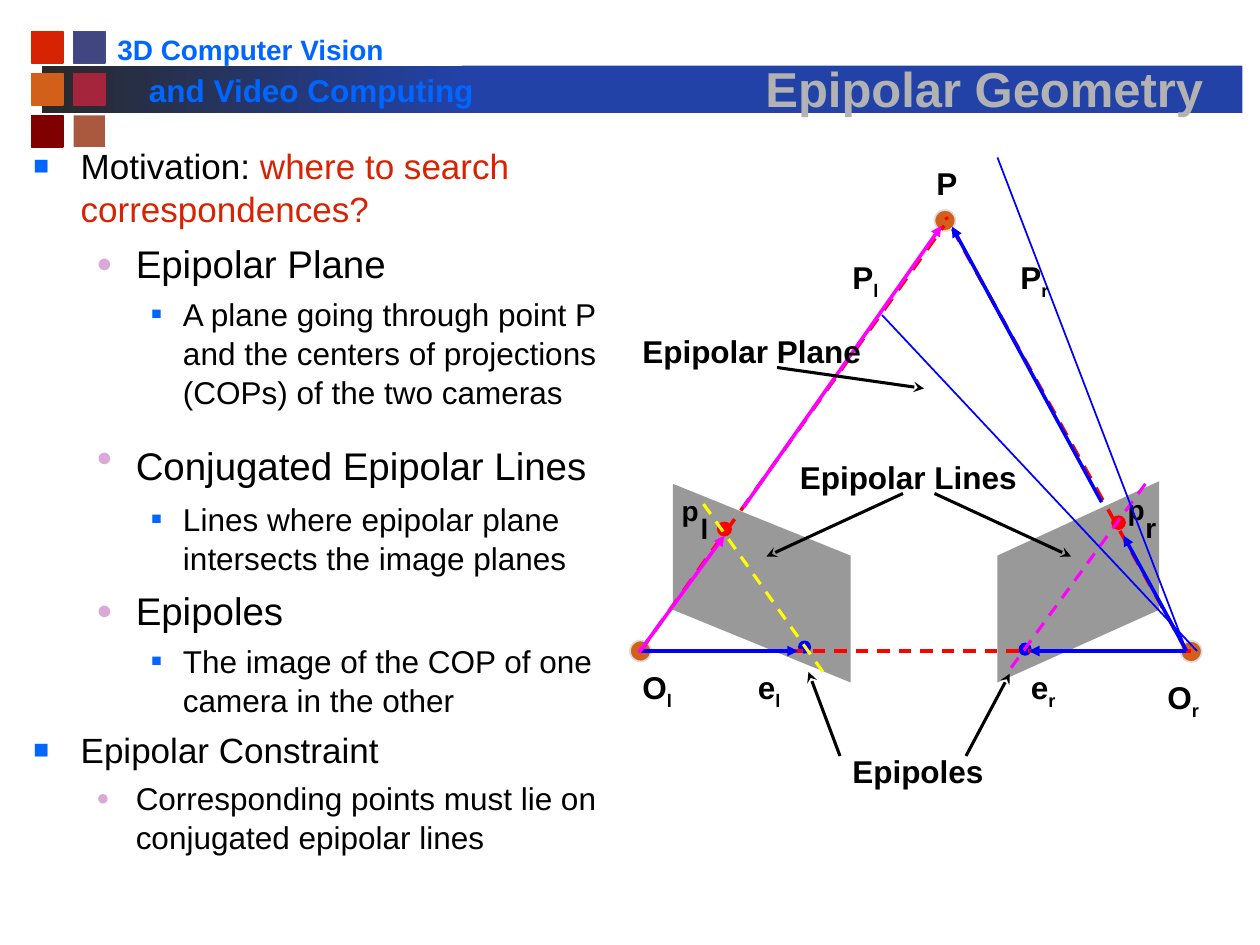
from lxml.etree import SubElement
from pptx import Presentation
from pptx.dml.color import RGBColor
from pptx.enum.dml import MSO_LINE
from pptx.enum.shapes import MSO_CONNECTOR, MSO_SHAPE
from pptx.enum.text import MSO_ANCHOR, PP_ALIGN
from pptx.oxml.ns import qn
from pptx.util import Pt

FONT = "Arial"
BLACK = RGBColor(0x00, 0x00, 0x00)
RED = RGBColor(0xFF, 0x00, 0x00)
BLUE = RGBColor(0x00, 0x00, 0xFF)
MAGENTA = RGBColor(0xFF, 0x00, 0xFF)
YELLOW = RGBColor(0xFF, 0xFF, 0x00)
ORANGE = RGBColor(0xD2, 0x60, 0x1A)
SCARLET = RGBColor(0xD8, 0x22, 0x04)
NAVY = RGBColor(0x22, 0x42, 0xA8)
CHARCOAL = RGBColor(0x29, 0x29, 0x29)
SKY = RGBColor(0x00, 0x66, 0xFF)
PLUM = RGBColor(0xDB, 0xA9, 0xD7)
SILVER = RGBColor(0xB2, 0xB2, 0xB2)
PALE = RGBColor(0xDD, 0xDD, 0xDD)
GRAY = RGBColor(0x99, 0x99, 0x99)

# Rows of header squares: (fill, outline)
SQUARES = [
    [(SCARLET, SCARLET), (RGBColor(0x42, 0x46, 0x80), RGBColor(0x45, 0x4A, 0x85))],
    [(ORANGE, ORANGE), (RGBColor(0xA5, 0x25, 0x3D),) * 2],
    [(RGBColor(0x80, 0x00, 0x00),) * 2, (RGBColor(0xAA, 0x58, 0x3E), None)],
]

# level, size, runs of (text, colour, size if different)
OUTLINE = [
    (0, 20, [("Motivation: ", BLACK, None),
             ("where to search correspondences?", SCARLET, None)]),
    (1, 22, [("Epipolar Plane", BLACK, None)]),
    (2, 18, [("A plane going through point P and the centers of projections "
              "(COPs) of the two cameras", BLACK, None)]),
    (1, 22, [("Conjugated Epipolar Lines", BLACK, None), (" ", BLACK, 33)]),
    (2, 18, [("Lines where epipolar plane intersects the image planes", BLACK, None)]),
    (1, 22, [("Epipoles", BLACK, None)]),
    (2, 18, [("The image of the COP of one camera in the other", BLACK, None)]),
    (0, 20, [("Epipolar Constraint", BLACK, None)]),
    (1, 18, [("Corresponding points must lie on conjugated epipolar lines", BLACK, None)]),
]
# margin, hanging indent, bullet, bullet colour, bullet size in percent
LEVELS = [(27, 27, "■", SKY, 75), (58.5, 22.5, "●", PLUM, 70), (85.5, 18, "■", SKY, 55)]

IMAGE_PLANES = [
    [(384.5, 276.5), (486, 317.5), (486, 390), (384.5, 348.5)],
    [(662.4, 275), (570, 317.5), (570, 390), (662.4, 348.5)],
]
# left, top, diameter, fill, outline
IMAGE_POINTS = [(409.7, 298, 8.6, RED, None), (635, 294.5, 8.4, RED, None)]
SCENE_POINTS = [(360, 366, 12, ORANGE, PALE), (674.7, 366.3, 12, ORANGE, PALE),
                (534, 120, 12, ORANGE, PALE)]
EPIPOLE_POINTS = [(456, 366, 7.5, BLUE, None), (582, 367.2, 7.5, BLUE, None)]

POINT_LABELS = [("p", 389.5, 282, 10), ("l", 400.3, 292.5, 4.5),
                ("p", 644.4, 281.5, 10), ("r", 654.5, 291.8, 6.5)]
# text, subscript, left, top, width
LABELS = [
    ("P", "", 528, 90, 27),
    ("O", "l", 360, 378, 42), ("O", "r", 660, 384, 42),
    ("e", "l", 426, 378, 42), ("e", "r", 582, 378, 42),
    ("P", "l", 480, 144, 42), ("P", "r", 576, 144, 42),
    ("Epipolar Plane", "", 360, 186, 150),
    ("Epipolar Lines", "", 450, 258, 150),
    ("Epipoles", "", 480, 426, 108),
]

# start, end, colour, width, dashed, arrowhead
LINES = [
    ((366, 372), (684, 372), RED, 1.75, True, None),
    ((366, 372), (456, 372), BLUE, 2, False, "triangle"),
    ((678, 372), (588, 372), BLUE, 2, False, "triangle"),
    ((366, 372), (539.5, 129), RED, 2, True, None),
    ((678, 372), (540.5, 124), RED, 2, True, None),
    ((365, 373), (414, 306), MAGENTA, 2, False, "triangle"),
    ((424.8, 290), (538, 129), MAGENTA, 2, False, "triangle"),
    ((678, 372), (642, 306), BLUE, 2, False, "triangle"),
    ((629.5, 287), (544, 129.5), BLUE, 2, False, "triangle"),
    ((402, 288), (471, 385), YELLOW, 1.75, True, None),
    ((654.5, 276.5), (576, 384), MAGENTA, 1.75, True, None),
    ((444, 210), (528, 222), BLACK, 1.75, False, "stealth"),
    ((516, 282), (438, 318), BLACK, 1.75, False, "stealth"),
    ((534, 282), (612, 318), BLACK, 1.75, False, "stealth"),
    ((552, 432), (577, 385), BLACK, 1.75, False, "stealth"),
    ((480, 432), (462, 384), BLACK, 1.75, False, "stealth"),
    ((504, 180), (684, 372), BLUE, 1, False, None),
    ((570, 90), (678, 372), BLUE, 1, False, None),
]

prs = Presentation()
prs.slide_width, prs.slide_height = Pt(720), Pt(540)
slide = prs.slides.add_slide(prs.slide_layouts[6])
shapes = slide.shapes


def paint(shape, fill, outline=None):
    shape.shadow.inherit = False
    shape.fill.solid()
    shape.fill.fore_color.rgb = fill
    if outline is None:
        shape.line.fill.background()
    else:
        shape.line.color.rgb = outline
        shape.line.width = Pt(1)


def add_preset(kind, left, top, width, height, fill, outline=None):
    shape = shapes.add_shape(kind, Pt(left), Pt(top), Pt(width), Pt(height))
    paint(shape, fill, outline)
    return shape


def add_dots(dots):
    for left, top, size, fill, outline in dots:
        add_preset(MSO_SHAPE.OVAL, left, top, size, size, fill, outline)


def text_frame(left, top, width, height, wrap=True):
    frame = shapes.add_textbox(Pt(left), Pt(top), Pt(width), Pt(height)).text_frame
    frame.word_wrap = wrap
    return frame


def set_font(font, size, color, bold=True):
    font.name, font.size, font.bold = FONT, Pt(size), bold
    font.color.rgb = color


def add_label(text, left, top, width, height, size, color=BLACK, wrap=True):
    frame = text_frame(left, top, width, height, wrap)
    paragraph = frame.paragraphs[0]
    paragraph.add_run().text = text
    set_font(paragraph.font, size, color)
    return frame


def add_bullet(paragraph, level):
    margin, hang, char, color, percent = LEVELS[level]
    props = paragraph._p.get_or_add_pPr()
    props.set("marL", str(Pt(margin)))
    props.set("indent", str(-Pt(hang)))
    bullet_color = SubElement(props, qn("a:buClr"))
    SubElement(bullet_color, qn("a:srgbClr"), val=str(color))
    SubElement(props, qn("a:buSzPct"), val=str(percent * 1000))
    SubElement(props, qn("a:buFont"), typeface=FONT)
    SubElement(props, qn("a:buChar"), char=char)


def add_line(start, end, color, width, dashed, head):
    line = shapes.add_connector(MSO_CONNECTOR.STRAIGHT, *map(Pt, start + end))
    line.line.color.rgb = color
    line.line.width = Pt(width)
    if dashed:
        line.line.dash_style = MSO_LINE.DASH
    if head:
        SubElement(line.line._get_or_add_ln(), qn("a:tailEnd"), type=head)
    SubElement(line._element.spPr, qn("a:effectLst"))


# Header
fade = add_preset(MSO_SHAPE.RECTANGLE, 24, 37.5, 240, 27, NAVY)
fade.fill.gradient()
fade.fill.gradient_angle = 0
for stop, color in zip(fade.fill.gradient_stops, (CHARCOAL, NAVY)):
    stop.color.rgb = color
for row, pair in enumerate(SQUARES):
    for column, (fill, outline) in enumerate(pair):
        add_preset(MSO_SHAPE.RECTANGLE, 18 + 24 * column, 18 + 24 * row, 18, 18, fill, outline)
add_preset(MSO_SHAPE.RECTANGLE, 264, 37.5, 446, 27, NAVY)
add_label("3D Computer Vision", 60, 15, 167, 27, 16, SKY, wrap=False)
add_label("and Video Computing", 78, 37, 204, 29, 18, SKY)

title = add_label("Epipolar Geometry", 408, 22.5, 309, 48, 28, SILVER)
title.vertical_anchor = MSO_ANCHOR.BOTTOM
title.paragraphs[0].alignment = PP_ALIGN.CENTER
effects = SubElement(title.paragraphs[0].runs[0]._r.get_or_add_rPr(), qn("a:effectLst"))
shadow = SubElement(effects, qn("a:outerShdw"), dist="35921", dir="2700000")
SubElement(shadow, qn("a:srgbClr"), val=str(BLACK))

# Outline
body = text_frame(12, 78, 336, 438)
for index, (level, size, runs) in enumerate(OUTLINE):
    paragraph = body.add_paragraph() if index else body.paragraphs[0]
    paragraph.level = level
    paragraph.line_spacing = 1.04
    paragraph.space_before = Pt(round(0.22 * size, 1))
    add_bullet(paragraph, level)
    for text, color, own_size in runs:
        run = paragraph.add_run()
        run.text = text
        set_font(run.font, own_size or size, color, bold=False)

# Diagram
for corners in IMAGE_PLANES:
    builder = shapes.build_freeform(Pt(corners[0][0]), Pt(corners[0][1]))
    builder.add_line_segments([(Pt(x), Pt(y)) for x, y in corners[1:]])
    paint(builder.convert_to_shape(), GRAY)
add_dots(IMAGE_POINTS)
for text, left, top, width in POINT_LABELS:
    frame = add_label(text, left, top, width, 19.5, 16, wrap=False)
    frame.margin_left = frame.margin_right = frame.margin_top = frame.margin_bottom = 0
add_dots(SCENE_POINTS + EPIPOLE_POINTS)
for line in LINES:
    add_line(*line)
for text, subscript, left, top, width in LABELS:
    paragraph = add_label(text, left, top, width, 29, 18).paragraphs[0]
    if subscript:
        run = paragraph.add_run()
        run.text = subscript
        run.font._element.set("baseline", "-25000")

prs.save("out.pptx")
